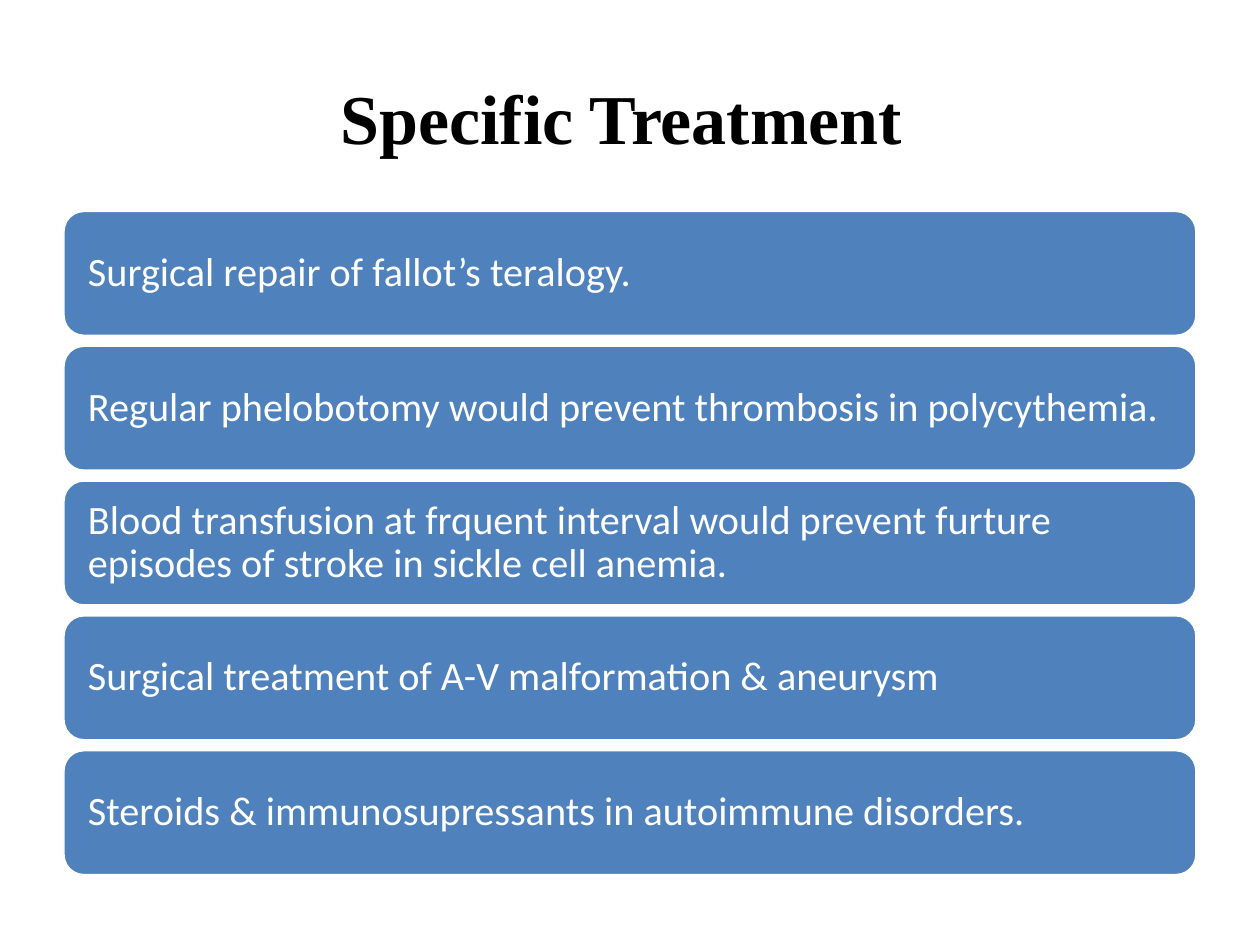
"""Build a slide that lists specific treatments as stacked bars."""
import dataclasses

import pptx
import pptx.dml.color
import pptx.enum.shapes
import pptx.enum.text
import pptx.util

Pt = pptx.util.Pt
RGB = pptx.dml.color.RGBColor


@dataclasses.dataclass(frozen=True)
class Theme:
    bar: RGB = RGB(0x4F, 0x81, 0xBD)
    white: RGB = RGB(0xFF, 0xFF, 0xFF)
    black: RGB = RGB(0, 0, 0)
    head: str = "Times New Roman"
    body: str = "Calibri"
    big: int = 40
    small: int = 23


THEME = Theme()
LEFT, WIDTH = 36, 648
TOP, HIGH, STEP = 120.24, 72, 77.04
ITEMS = (
    "Surgical repair of fallot’s teralogy.",
    "Regular phelobotomy would prevent thrombosis in polycythemia.",
    "Blood transfusion at frquent interval would prevent furture "
    "episodes of stroke in sickle cell anemia.",
    "Surgical treatment of A-V malformation & aneurysm",
    "Steroids & immunosupressants in autoimmune disorders.",
)


def write(shape, text, face, size, color, align, bold=False):
    frame = shape.text_frame
    frame.word_wrap = True
    frame.vertical_anchor = pptx.enum.text.MSO_ANCHOR.MIDDLE
    line = frame.paragraphs[0]
    line.alignment = align
    run = line.add_run()
    run.text = text
    run.font.name = face
    run.font.size = Pt(size)
    run.font.bold = bold
    run.font.color.rgb = color
    return frame


def add_title(slide, text):
    box = slide.shapes.add_textbox(Pt(LEFT), Pt(21.6), Pt(WIDTH), Pt(90))
    write(box, text, THEME.head, THEME.big, THEME.black,
          pptx.enum.text.PP_ALIGN.CENTER, True)


def add_bar(slide, top, text):
    kind = pptx.enum.shapes.MSO_SHAPE.ROUNDED_RECTANGLE
    bar = slide.shapes.add_shape(kind, Pt(LEFT), Pt(top), Pt(WIDTH), Pt(HIGH))
    bar.shadow.inherit = False
    bar.fill.solid()
    bar.fill.fore_color.rgb = THEME.bar
    bar.line.color.rgb = THEME.white
    bar.line.width = Pt(2)
    frame = write(bar, text, THEME.body, THEME.small, THEME.white,
                  pptx.enum.text.PP_ALIGN.LEFT)
    frame.margin_left = frame.margin_right = Pt(10.8)
    frame.paragraphs[0].line_spacing = 0.9


def main():
    deck = pptx.Presentation()
    deck.slide_width, deck.slide_height = Pt(720), Pt(540)
    slide = deck.slides.add_slide(deck.slide_layouts[6])
    for row, text in enumerate(ITEMS):
        add_bar(slide, TOP + row * STEP, text)
    add_title(slide, "Specific Treatment ")
    deck.save("out.pptx")


if __name__ == "__main__":
    main()
